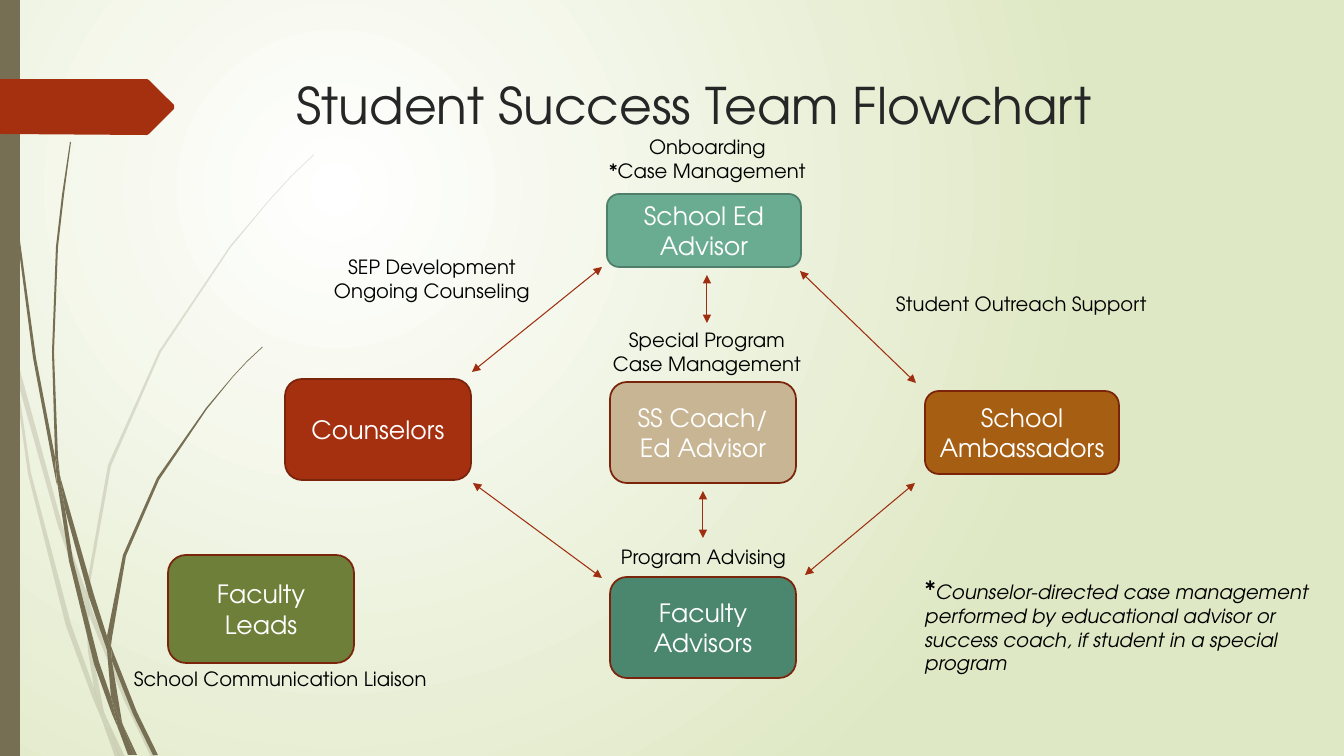
from lxml import etree
from pptx import Presentation
from pptx import util as u
from pptx.dml.color import RGBColor
from pptx.enum import shapes, text
from pptx.oxml.ns import qn

PIXEL = u.Inches(1) / 100.8
FONT = "TeX Gyre Adventor"
OLIVE, RUST, DARK_RUST = "766F54", "A53010", "7A240C"

PALE_GRASS = [
    [(11, 353), (9, 325), (0, 284), (0, 301), (10, 347)],
    [(58, 526), (85, 604), (86, 591), (62, 524), (14, 348), (17, 379)],
    [(93, 612), (89, 601), (89, 615), (124, 700), (151, 757), (156, 757), (128, 698)],
    [(120, 757), (125, 757), (106, 717)],
    [(94, 688), (71, 624), (31, 473), (17, 379), (11, 353), (28, 474), (66, 626),
     (93, 699), (102, 720), (100, 713)],
    [(85, 604), (88, 651), (94, 688), (97, 698), (106, 717), (104, 712), (92, 651),
     (89, 615), (89, 613)],
    [(89, 589), (111, 466), (161, 352), (231, 247), (270, 200), (292, 176), (314, 155),
     (314, 154), (291, 176), (270, 199), (230, 246), (159, 351), (108, 465), (86, 589),
     (86, 591), (89, 601)],
    [(102, 720), (115, 757), (120, 757)],
    [(89, 613), (89, 615), (89, 601), (86, 591), (85, 604)],
    [(97, 698), (94, 688), (100, 713), (102, 720), (120, 757), (106, 717)],
]
DARK_GRASS = [
    [(7, 111), (17, 235), (33, 358), (56, 481), (57, 485), (55, 461), (55, 457),
     (36, 358), (19, 234), (8, 110), (5, 48), (4, 0), (3, 0), (4, 48)],
    [(89, 597), (107, 650), (107, 638), (107, 636), (94, 595), (60, 476), (65, 509)],
    [(114, 654), (111, 646), (112, 661), (133, 714), (153, 755), (158, 755), (137, 712)],
    [(111, 697), (99, 662), (73, 560), (65, 509), (57, 481), (69, 561), (94, 664),
     (112, 714), (118, 728), (117, 723)],
    [(60, 476), (58, 457), (54, 352), (58, 247), (64, 195), (71, 142), (70, 142),
     (62, 195), (56, 247), (52, 352), (55, 453)],
    [(134, 755), (137, 755), (123, 725)],
    [(57, 481), (65, 509), (60, 476), (55, 453), (55, 457)],
    [(112, 638), (126, 556), (159, 480), (207, 409), (233, 377), (247, 362), (263, 347),
     (262, 347), (247, 361), (233, 376), (206, 408), (157, 478), (123, 555), (107, 636),
     (111, 646)],
    [(118, 728), (128, 755), (132, 755)],
    [(107, 650), (111, 697), (117, 712), (123, 725), (122, 722), (112, 661), (110, 656)],
    [(107, 650), (110, 656), (112, 661), (111, 646), (107, 636), (107, 638)],
    [(117, 712), (111, 697), (117, 723), (118, 728), (131, 755), (134, 755), (123, 725)],
]
PENNANT = [(0, 79), (147, 79), (149, 80), (174, 105), (174, 109), (149, 134),
           (147, 135), (0, 134)]
ROLES = [
    ("Counselors", (285, 379, 186, 101), RUST, DARK_RUST, 0),
    ("School Ed Advisor", (607, 194, 194, 73), "6AAC91", "4E7F6B", 10),
    ("Faculty Leads", (168, 555, 186, 108), "6D7F39", DARK_RUST, 0),
    ("Faculty Advisors", (610, 577, 186, 101), "4B866E", DARK_RUST, 0),
    ("SS Coach/ Ed Advisor", (610, 382, 186, 101), "C8B594", DARK_RUST, 0),
    ("School Ambassadors", (925, 391, 194, 83), "A65E12", DARK_RUST, 0),
]
DUTIES = [
    (["Onboarding", "*Case Management"], (560, 130, 295, 57), True),
    (["SEP Development", "Ongoing Counseling"], (279, 250, 306, 57), True),
    (["Special Program Case Management"], (602, 323, 210, 57), True),
    (["Student Outreach Support"], (886, 287, 287, 34), False),
    (["School Communication Liaison"], (124, 662, 324, 34), False),
    (["Program Advising"], (611, 540, 203, 34), False),
]
ARROWS = [
    ((472, 372), (602, 267)), ((707, 323), (707, 275)), ((800, 271), (916, 383)),
    ((473, 483), (602, 578)), ((915, 483), (805, 575)), ((703, 491), (703, 538)),
]


def emu(*pixels):
    """Turn pixel lengths into a list of EMU."""
    return [u.Emu(round(pixel * PIXEL)) for pixel in pixels]


def colour(value):
    """Turn a hex string into a colour."""
    return RGBColor.from_string(value)


def set_font(paragraph, size, value):
    """Set font, size and colour of a paragraph."""
    paragraph.font.name = FONT
    paragraph.font.size = u.Pt(size)
    paragraph.font.color.rgb = colour(value)


def paint(shape, fill, line=None):
    """Fill a shape, with an outline if one is given, and drop its shadow."""
    shape.shadow.inherit = False
    shape.fill.solid()
    shape.fill.fore_color.rgb = colour(fill)
    if line:
        shape.line.color.rgb = colour(line)
        shape.line.width = u.Pt(1.25)
    else:
        shape.line.fill.background()


def paint_background(slide):
    """Give the slide a radial gradient centred at its upper left."""
    fill = slide.background.fill
    fill.gradient()
    for stop, value in zip(fill.gradient_stops, ("FFFFFF", "DFE8C4")):
        stop.color.rgb = colour(value)
    gradient = next(slide.element.iter(qn("a:gradFill")))
    linear = gradient.find(qn("a:lin"))
    radial = etree.Element(qn("a:path"), path="circle")
    etree.SubElement(radial, qn("a:fillToRect"), l="50000", t="50000", r="100000", b="100000")
    gradient.replace(linear, radial)


def add_outline(container, points, fill, opacity=100):
    """Add a closed filled outline through pixel points."""
    builder = container.build_freeform(*points[0], scale=PIXEL)
    builder.add_line_segments(points[1:], close=True)
    shape = builder.convert_to_shape()
    paint(shape, fill)
    if opacity < 100:
        value = next(shape.element.spPr.iter(qn("a:srgbClr")))
        etree.SubElement(value, qn("a:alpha"), val=str(opacity * 1000))


def add_title(slide, wording, box):
    """Place and format the title placeholder."""
    title = slide.shapes.title
    title.left, title.top, title.width, title.height = emu(*box)
    frame = title.text_frame
    frame.text = wording
    frame.auto_size = text.MSO_AUTO_SIZE.NONE
    frame.vertical_anchor = text.MSO_ANCHOR.TOP
    frame.paragraphs[0].alignment = text.PP_ALIGN.LEFT
    set_font(frame.paragraphs[0], 36, "262626")


def add_role(slide, wording, box, fill, line, space_before):
    """Add a rounded box that names a role."""
    shape = slide.shapes.add_shape(shapes.MSO_SHAPE.ROUNDED_RECTANGLE, *emu(*box))
    paint(shape, fill, line)
    shape.text_frame.text = wording
    shape.text_frame.vertical_anchor = text.MSO_ANCHOR.MIDDLE
    paragraph = shape.text_frame.paragraphs[0]
    paragraph.alignment = text.PP_ALIGN.CENTER
    paragraph.space_before = u.Pt(space_before)
    set_font(paragraph, 18, "FFFFFF")


def add_label(slide, lines, box, centred=False):
    """Add a wrapped text box, one paragraph a line, and return its frame."""
    frame = slide.shapes.add_textbox(*emu(*box)).text_frame
    frame.word_wrap = True
    frame.text = "\n".join(lines)
    for paragraph in frame.paragraphs:
        paragraph.alignment = text.PP_ALIGN.CENTER if centred else text.PP_ALIGN.LEFT
        set_font(paragraph, 14, "000000")
    return frame


def add_footnote(slide, wording, box):
    """Add the italic footnote behind a larger asterisk."""
    paragraph = add_label(slide, ["*"], box).paragraphs[0]
    paragraph.runs[0].font.size = u.Pt(18)
    note = paragraph.add_run()
    note.text = wording
    note.font.italic = True


def add_arrow(slide, start, end):
    """Add a thin line with a head at both ends."""
    arrow = slide.shapes.add_connector(shapes.MSO_CONNECTOR.STRAIGHT, *emu(*start, *end))
    arrow.line.color.rgb = colour("9E2E0F")
    arrow.line.width = u.Pt(0.75)
    line = arrow.element.spPr.find(qn("a:ln"))
    for tag in ("a:headEnd", "a:tailEnd"):
        etree.SubElement(line, qn(tag), type="triangle")
    etree.SubElement(arrow.element.spPr, qn("a:effectLst"))


def main():
    """Build the flowchart slide."""
    presentation = Presentation()
    presentation.slide_width, presentation.slide_height = emu(1344, 756)
    slide = presentation.slides.add_slide(presentation.slide_layouts[5])
    paint_background(slide)
    for blades, opacity in ((PALE_GRASS, 20), (DARK_GRASS, 100)):
        group = slide.shapes.add_group_shape()
        for points in blades:
            add_outline(group.shapes, points, OLIVE, opacity)
    side_bar = slide.shapes.add_shape(shapes.MSO_SHAPE.RECTANGLE, *emu(0, 0, 20, 756))
    paint(side_bar, OLIVE)
    add_outline(slide.shapes, PENNANT, RUST)
    add_title(slide, "Student Success Team Flowchart", (286, 69, 983, 141))
    for role in ROLES:
        add_role(slide, *role)
    for arrow in ARROWS:
        add_arrow(slide, *arrow)
    for duty in DUTIES:
        add_label(slide, *duty)
    add_footnote(slide, "Counselor-directed case management performed by educational advisor "
                 "or success coach, if student in a special program", (915, 569, 407, 112))
    presentation.save("out.pptx")


main()
